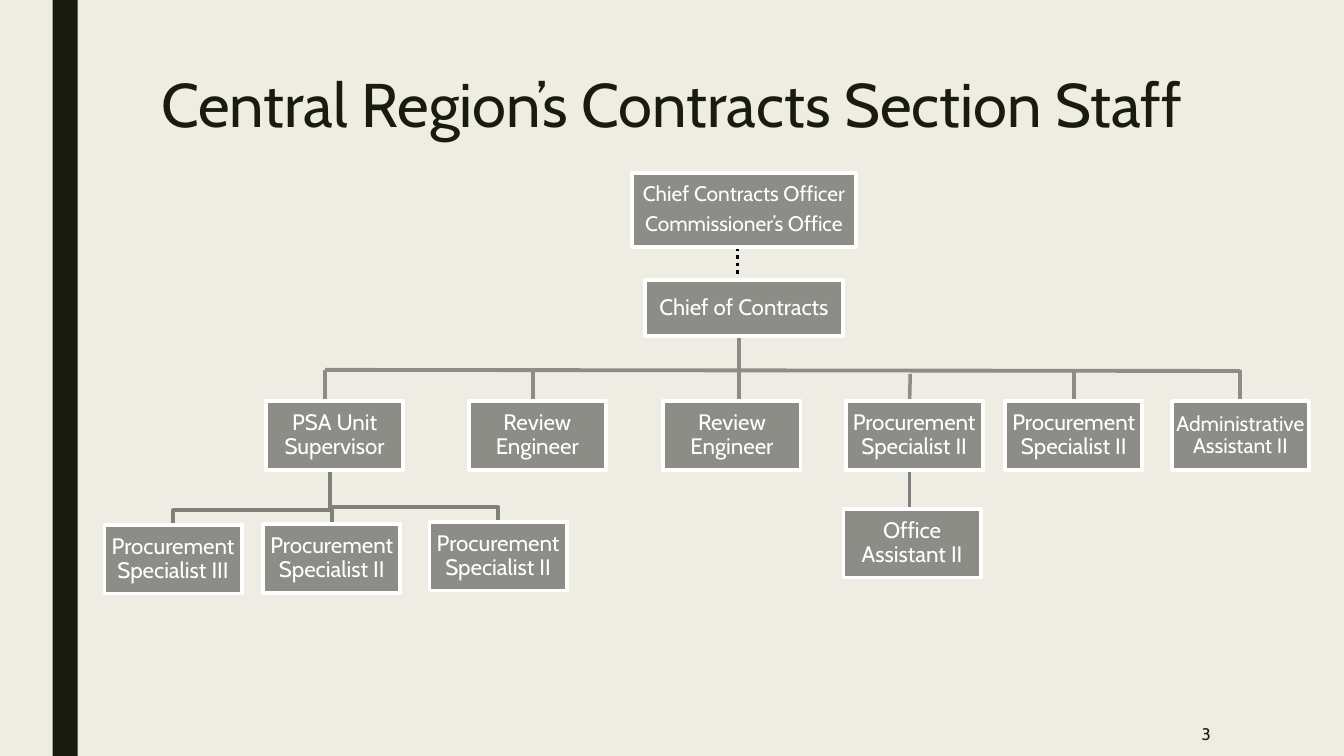
from lxml.etree import SubElement
from pptx import Presentation
from pptx.dml.color import RGBColor
from pptx.enum.dml import MSO_LINE
from pptx.enum.shapes import MSO_CONNECTOR, MSO_SHAPE
from pptx.enum.text import MSO_ANCHOR, PP_ALIGN
from pptx.oxml.ns import qn
from pptx.util import Pt

CREAM = RGBColor(0xEF, 0xED, 0xE3)
INK = RGBColor(0x19, 0x1B, 0x0E)
STONE = RGBColor(0x8C, 0x8D, 0x86)
DARK_STONE = RGBColor(0x7F, 0x80, 0x7A)
GRAY = RGBColor(0x80, 0x80, 0x80)
BLACK = RGBColor(0, 0, 0)
WHITE = RGBColor(0xFF, 0xFF, 0xFF)

TOP = 0
STAFF_W, STAFF_H = 98, 49
TEAM_TOP = 286.6
TEAM_BOTTOM = TEAM_TOP + STAFF_H
BUS_TOP = 264.6


def write_text(frame, text, size=16, color=WHITE, font="Cabin", align=PP_ALIGN.CENTER,
               anchor=MSO_ANCHOR.MIDDLE, spacing=0.9, after=0, inset=None):
    """Fill a text frame, one paragraph per line of text."""
    frame.word_wrap = True
    frame.vertical_anchor = anchor
    if inset is not None:
        frame.margin_left = frame.margin_right = Pt(inset)
        frame.margin_top = frame.margin_bottom = Pt(inset)
    for index, line in enumerate(text.split("\n")):
        paragraph = frame.add_paragraph() if index else frame.paragraphs[0]
        paragraph.alignment = align
        paragraph.line_spacing = spacing
        paragraph.space_after = Pt(after)
        run = paragraph.add_run()
        run.text = line
        run.font.name = font
        run.font.size = Pt(size)
        run.font.color.rgb = color


class OrgChart:
    def __init__(self, slide, line_width=2.75):
        self.slide = slide
        self.shapes = slide.shapes
        self.line_width = line_width
        slide.background.fill.solid()
        slide.background.fill.fore_color.rgb = CREAM

    def band(self, left, top, width, height, color):
        band = self.shapes.add_shape(MSO_SHAPE.RECTANGLE, Pt(left), Pt(top), Pt(width), Pt(height))
        band.shadow.inherit = False
        band.fill.solid()
        band.fill.fore_color.rgb = color
        band.line.fill.background()
        return band

    def box(self, text, left, top, width=STAFF_W, height=STAFF_H, size=16):
        box = self.band(left, top, width, height, STONE)
        box.line.color.rgb = WHITE
        box.line.width = Pt(self.line_width)
        write_text(box.text_frame, text, size=size, after=size * 0.35, inset=0.7)
        return box

    def line(self, x1, y1, x2, y2, color=STONE, width=None, dash=None):
        line = self.shapes.add_connector(MSO_CONNECTOR.STRAIGHT, Pt(x1), Pt(y1), Pt(x2), Pt(y2))
        line.line.color.rgb = color
        line.line.width = Pt(width or self.line_width)
        if dash:
            line.line.dash_style = dash
        SubElement(line._element.spPr, qn("a:effectLst"))
        return line

    def branch(self, x1, y1, bend, x2, y2):
        """Draw a stepped line that turns at the height given by bend."""
        builder = self.shapes.build_freeform(Pt(x1), Pt(y1), scale=1.0)
        corners = [(x1, bend), (x2, bend), (x2, y2)]
        builder.add_line_segments([(Pt(x), Pt(y)) for x, y in corners], close=False)
        branch = builder.convert_to_shape()
        branch.shadow.inherit = False
        branch.fill.background()
        branch.line.color.rgb = DARK_STONE
        branch.line.width = Pt(self.line_width)

    def text(self, text, left, top, width, height, **text_format):
        text_box = self.shapes.add_textbox(Pt(left), Pt(top), Pt(width), Pt(height))
        write_text(text_box.text_frame, text, **text_format)


def main():
    deck = Presentation()
    deck.slide_width, deck.slide_height = Pt(960), Pt(540)
    chart = OrgChart(deck.slides.add_slide(deck.slide_layouts[6]))
    chart.band(37.5, 0, 18, 540, INK)

    # Lines lie behind the boxes
    chart.line(649.5, TEAM_BOTTOM, 649.5, 369.5, color=GRAY, width=2.5)
    chart.line(650.2, 267, 649.5, 297.5, width=2.5)
    for x in (232.3, 381):
        chart.line(x, BUS_TOP, x, 309)
    chart.line(527.8, 236.5, 527.8, 290)
    specialist_drop = chart.line(767, BUS_TOP, 767, TEAM_TOP, width=2.5)
    assistant_drop = chart.line(886, BUS_TOP, 886, TEAM_TOP)
    for bend, x, y in ((362.3, 355.7, 372.8), (364.5, 237, 374.5), (364.5, 123.8, 375)):
        chart.branch(236, TEAM_BOTTOM, bend, x, y)
    chart.line(526.8, 176.6, 526.8, 199.8, color=BLACK, dash=MSO_LINE.ROUND_DOT)

    chart.box("Chief Contracts Officer\nCommissioner’s Office", 451.4, 123.8, 160, 52.7, size=15)
    chart.box("Chief of Contracts", 460.6, 199.8, 141.6, 40.5)

    for role, left in (("PSA Unit Supervisor", 190), ("Review Engineer", 334.8),
                       ("Review Engineer", 473.8), ("Procurement Specialist II", 604)):
        chart.box(role, left, TEAM_TOP)
    specialist = chart.box("Procurement Specialist II", 718, TEAM_TOP)
    assistant = chart.box("Administrative Assistant II", 837, TEAM_TOP, size=15)
    specialist_drop.end_connect(specialist, TOP)
    assistant_drop.end_connect(assistant, TOP)

    for role, left, top in (("Procurement Specialist III", 74.6, 375),
                            ("Procurement Specialist II", 188, 374.5),
                            ("Procurement Specialist II", 306.8, 372.8),
                            ("Office Assistant II", 602.5, 363.5)):
        chart.box(role, left, top)

    chart.text("Central Region’s Contracts Section Staff", 108, 49.7, 836, 116.6, size=44,
               color=INK, align=PP_ALIGN.LEFT, anchor=MSO_ANCHOR.TOP, spacing=0.89)
    chart.text("3", 746, 508.3, 126, 31.7, size=12, color=INK, align=PP_ALIGN.RIGHT, spacing=1.0)
    chart.line(232.3, 264.2, 886, 265)

    deck.save("out.pptx")


if __name__ == "__main__":
    main()
